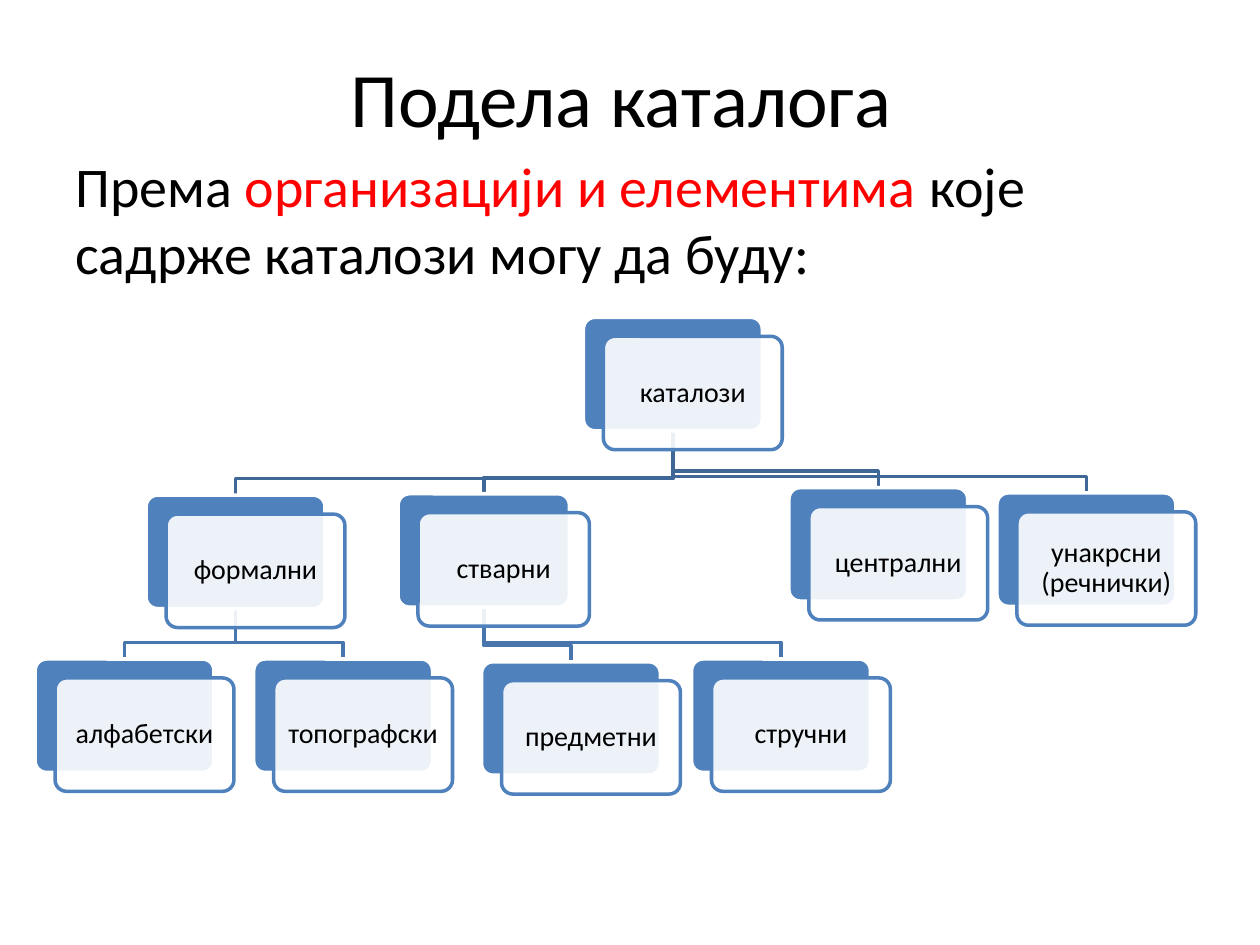
from dataclasses import dataclass

import pptx
import pptx.dml.color
import pptx.enum.shapes
import pptx.enum.text
import pptx.oxml.ns
import pptx.util
from lxml import etree

Pt = pptx.util.Pt
RGBColor = pptx.dml.color.RGBColor
ALIGN = pptx.enum.text.PP_ALIGN
ANCHOR = pptx.enum.text.MSO_ANCHOR
ROUNDED = pptx.enum.shapes.MSO_SHAPE.ROUNDED_RECTANGLE

FONT = "Calibri"
BLACK = RGBColor(0x00, 0x00, 0x00)
WHITE = RGBColor(0xFF, 0xFF, 0xFF)
RED = RGBColor(0xFF, 0x00, 0x00)
BLUE = RGBColor(0x4F, 0x81, 0xBD)
FIRST_LEVEL_LINE = RGBColor(0x3F, 0x67, 0x97)
SECOND_LEVEL_LINE = RGBColor(0x48, 0x75, 0xAC)

CARD_HEIGHT = 64.8
CARD_SHIFT_X = 11.4
CARD_SHIFT_Y = 10.8
ELBOW_RISE = 9.4
LINE_WIDTH = 2


@dataclass(frozen=True)
class Catalogue:
    label: str
    left: float
    top: float
    width: float = 102.2

    @property
    def center(self) -> float:
        return self.left + self.width / 2

    @property
    def bottom(self) -> float:
        return self.top + CARD_HEIGHT


@dataclass(frozen=True)
class Branch:
    parent: Catalogue
    child: Catalogue
    color: RGBColor


ROOT = Catalogue("каталози", 333.4, 181.4)
FORMAL = Catalogue("формални", 83.5, 283)
ALPHABETICAL = Catalogue("алфабетски", 20.1, 376.6)
TOPOGRAPHIC = Catalogue("топографски", 145, 376.6)
SUBJECT_BASED = Catalogue("стварни", 227.5, 282.2, 97.9)
TOPICAL = Catalogue("предметни", 275.2, 378.2)
EXPERT = Catalogue("стручни", 395.2, 376.6)
CENTRAL = Catalogue("централни", 450.8, 278.7)
CROSS = Catalogue("унакрсни (речнички)", 569.7, 281.7)

CATALOGUES = [ROOT, FORMAL, ALPHABETICAL, TOPOGRAPHIC, SUBJECT_BASED,
              TOPICAL, EXPERT, CENTRAL, CROSS]
BRANCHES = [
    Branch(ROOT, CROSS, FIRST_LEVEL_LINE),
    Branch(ROOT, CENTRAL, FIRST_LEVEL_LINE),
    Branch(SUBJECT_BASED, EXPERT, SECOND_LEVEL_LINE),
    Branch(SUBJECT_BASED, TOPICAL, SECOND_LEVEL_LINE),
    Branch(ROOT, SUBJECT_BASED, FIRST_LEVEL_LINE),
    Branch(FORMAL, TOPOGRAPHIC, SECOND_LEVEL_LINE),
    Branch(FORMAL, ALPHABETICAL, SECOND_LEVEL_LINE),
    Branch(ROOT, FORMAL, FIRST_LEVEL_LINE),
]


def style_run(run, size: float, color: RGBColor) -> None:
    run.font.name = FONT
    run.font.size = Pt(size)
    run.font.color.rgb = color


def add_text(slide, top: float, height: float, size: float,
             parts: list[tuple[str, RGBColor]]):
    """Add a full-width text box of coloured parts and return its frame."""
    frame = slide.shapes.add_textbox(
        Pt(36), Pt(top), Pt(648), Pt(height)).text_frame
    frame.word_wrap = True
    for words, color in parts:
        run = frame.paragraphs[0].add_run()
        run.text = words
        style_run(run, size, color)
    return frame


def add_branch(slide, branch: Branch) -> None:
    start, end = branch.parent, branch.child
    bend = end.top - ELBOW_RISE
    builder = slide.shapes.build_freeform(Pt(start.center), Pt(start.bottom))
    builder.add_line_segments(
        [(Pt(start.center), Pt(bend)), (Pt(end.center), Pt(bend)),
         (Pt(end.center), Pt(end.top))], close=False)
    elbow = builder.convert_to_shape()
    elbow.shadow.inherit = False
    elbow.fill.background()
    elbow.line.color.rgb = branch.color
    elbow.line.width = Pt(LINE_WIDTH)


def add_card(slide, left: float, top: float, width: float,
             fill: RGBColor, outline: RGBColor):
    card = slide.shapes.add_shape(
        ROUNDED, Pt(left), Pt(top), Pt(width), Pt(CARD_HEIGHT))
    card.adjustments[0] = 0.1
    card.shadow.inherit = False
    card.fill.solid()
    card.fill.fore_color.rgb = fill
    card.line.color.rgb = outline
    card.line.width = Pt(LINE_WIDTH)
    return card


def set_opacity(shape, percent: int) -> None:
    qn = pptx.oxml.ns.qn
    fill_color = shape.fill._xPr.find(qn("a:solidFill")).find(qn("a:srgbClr"))
    etree.SubElement(fill_color, qn("a:alpha"), val=str(percent * 1000))


def add_catalogue(slide, item: Catalogue) -> None:
    """Draw a blue card with a translucent labelled card shifted over it."""
    add_card(slide, item.left, item.top, item.width, BLUE, WHITE)
    front = add_card(slide, item.left + CARD_SHIFT_X, item.top + CARD_SHIFT_Y,
                     item.width, WHITE, BLUE)
    set_opacity(front, 90)
    frame = front.text_frame
    frame.text = item.label
    frame.word_wrap = True
    frame.vertical_anchor = ANCHOR.MIDDLE
    frame.margin_left = frame.margin_right = Pt(4.8)
    frame.margin_top = frame.margin_bottom = Pt(4.8)
    label = frame.paragraphs[0]
    label.alignment = ALIGN.CENTER
    label.line_spacing = 0.9
    label.space_after = Pt(5.6)
    style_run(label.runs[0], 16, BLACK)


def main() -> None:
    deck = pptx.Presentation()
    deck.slide_width, deck.slide_height = Pt(720), Pt(540)
    slide = deck.slides.add_slide(deck.slide_layouts[6])

    title = add_text(slide, 21.6, 67, 44, [("Подела каталога ", BLACK)])
    title.vertical_anchor = ANCHOR.MIDDLE
    title.paragraphs[0].alignment = ALIGN.CENTER

    intro = add_text(slide, 82.8, 399.6, 32, [
        ("Према ", BLACK),
        ("организацији и елементима ", RED),
        ("које садрже каталози могу да буду:", BLACK),
    ])
    intro.paragraphs[0].space_before = Pt(6.4)

    for branch in BRANCHES:
        add_branch(slide, branch)
    for item in CATALOGUES:
        add_catalogue(slide, item)

    deck.save("out.pptx")


if __name__ == "__main__":
    main()
